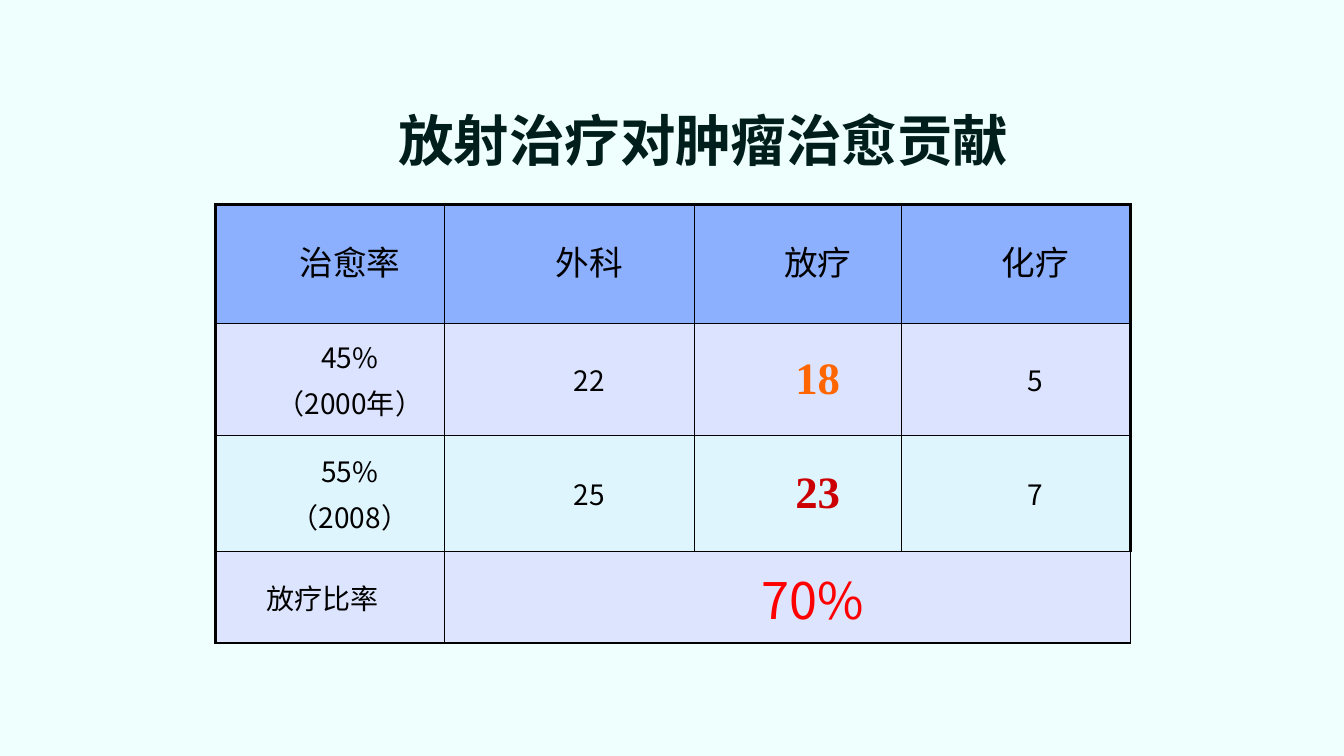
from lxml import etree
from pptx import Presentation
from pptx.dml.color import RGBColor
from pptx.enum.text import MSO_ANCHOR, PP_ALIGN
from pptx.oxml.ns import qn
from pptx.util import Inches, Pt

CENTER, LEFT = PP_ALIGN.CENTER, PP_ALIGN.LEFT
MIDDLE = MSO_ANCHOR.MIDDLE

THEME = {
    "sans": "Noto Sans CJK SC", "arial": "Arial", "serif": "Times New Roman",
    "background": "EFFFFD", "title": "001E1B", "ink": "000000",
    "rate_2000": "FF6600", "rate_2008": "CC0000", "ratio": "FF0000",
    "title_size": 39.6, "header_size": 24, "body_size": 20,
    "highlight_size": 32, "ratio_size": 36,
    "outer_line": 2.25, "inner_line": 1,
}
ROW_FILLS = [("3366FF", 52), ("CCCCFF", 54), ("CCECFF", 48), ("CCCCFF", 52)]


def write(frame, text, size=THEME["body_size"], color=THEME["ink"],
          font=THEME["sans"], bold=False, align=CENTER, indent=0.39):
    """Fill a text frame, one paragraph per line of text."""
    for index, line in enumerate(text.split("\n")):
        paragraph = frame.paragraphs[0] if index == 0 else frame.add_paragraph()
        paragraph.alignment = align
        properties = paragraph._p.get_or_add_pPr()
        properties.set("marL", str(Inches(indent)))
        properties.set("indent", "0")
        if index:
            paragraph.space_before = Pt(size * 0.2)
        run = paragraph.add_run()
        run.text = line
        run.font.size = Pt(size)
        run.font.bold = bold
        run.font.color.rgb = RGBColor.from_string(color)
        run.font.name = font
        east_asian = etree.SubElement(run._r.get_or_add_rPr(), qn("a:ea"))
        east_asian.set("typeface", font)


def style_cell(cell, borders, fill, opacity):
    """Set border widths (tag to points) and a translucent fill."""
    cell.vertical_anchor = MIDDLE
    cell.margin_left = cell.margin_right = Inches(0.11)
    cell.margin_top = cell.margin_bottom = Inches(0.05)
    properties = cell._tc.get_or_add_tcPr()
    for tag, width in borders.items():
        line = etree.SubElement(properties, qn(tag), w=str(Pt(width)))
        paint = etree.SubElement(line, qn("a:solidFill"))
        etree.SubElement(paint, qn("a:srgbClr"), val=THEME["ink"])
    cell.fill.solid()
    cell.fill.fore_color.rgb = RGBColor.from_string(fill)
    color = properties.find(qn("a:solidFill")).find(qn("a:srgbClr"))
    etree.SubElement(color, qn("a:alpha"), val=str(opacity * 1000))


prs = Presentation()
prs.slide_width, prs.slide_height = Inches(13.33), Inches(7.5)
slide = prs.slides.add_slide(prs.slide_layouts[6])
slide.background.fill.solid()
slide.background.fill.fore_color.rgb = RGBColor.from_string(THEME["background"])

title = slide.shapes.add_textbox(Inches(2.38), Inches(1.08), Inches(9.19), Inches(0.61))
title.text_frame.word_wrap = True
title.text_frame.vertical_anchor = MIDDLE
write(title.text_frame, "放射治疗对肿瘤治愈贡献", size=THEME["title_size"],
      color=THEME["title"], bold=True, indent=0)

contents = [
    ["治愈率", "外科", "放疗", "化疗"],
    ["45%\n（2000年）", "22", "18", "5"],
    ["55%\n（2008）", "25", "23", "7"],
    ["放疗比率", "70%"],
]
column_widths = [2.27, 2.48, 2.05, 2.27]
row_heights = [1.18, 1.11, 1.15, 0.91]
last_row, last_column = len(row_heights) - 1, len(column_widths) - 1

highlight = {"size": THEME["highlight_size"], "font": THEME["serif"], "bold": True}
special_formats = {
    (1, 2): {**highlight, "color": THEME["rate_2000"]},
    (2, 2): {**highlight, "color": THEME["rate_2008"]},
    (3, 0): {"align": LEFT},
    (3, 1): {"size": THEME["ratio_size"], "color": THEME["ratio"], "indent": 0.5},
}
header_format = {"size": THEME["header_size"], "font": THEME["arial"]}

cure_rates = slide.shapes.add_table(
    len(row_heights), len(column_widths), Inches(2.14), Inches(2.03),
    Inches(sum(column_widths)), Inches(sum(row_heights))).table
cure_rates.first_row = cure_rates.horz_banding = False
for column, width in zip(cure_rates.columns, column_widths):
    column.width = Inches(width)
for row, height in zip(cure_rates.rows, row_heights):
    row.height = Inches(height)
cure_rates.cell(last_row, 1).merge(cure_rates.cell(last_row, last_column))

for r, (fill, opacity) in enumerate(ROW_FILLS):
    for c in range(len(column_widths)):
        on_edge = {"a:lnL": c == 0, "a:lnR": c == last_column,
                   "a:lnT": r == 0, "a:lnB": r == last_row}
        borders = {tag: THEME["outer_line" if edge else "inner_line"]
                   for tag, edge in on_edge.items()}
        style_cell(cure_rates.cell(r, c), borders, fill, opacity)
    for c, text in enumerate(contents[r]):
        text_format = header_format if r == 0 else special_formats.get((r, c), {})
        write(cure_rates.cell(r, c).text_frame, text, **text_format)

prs.save("out.pptx")
